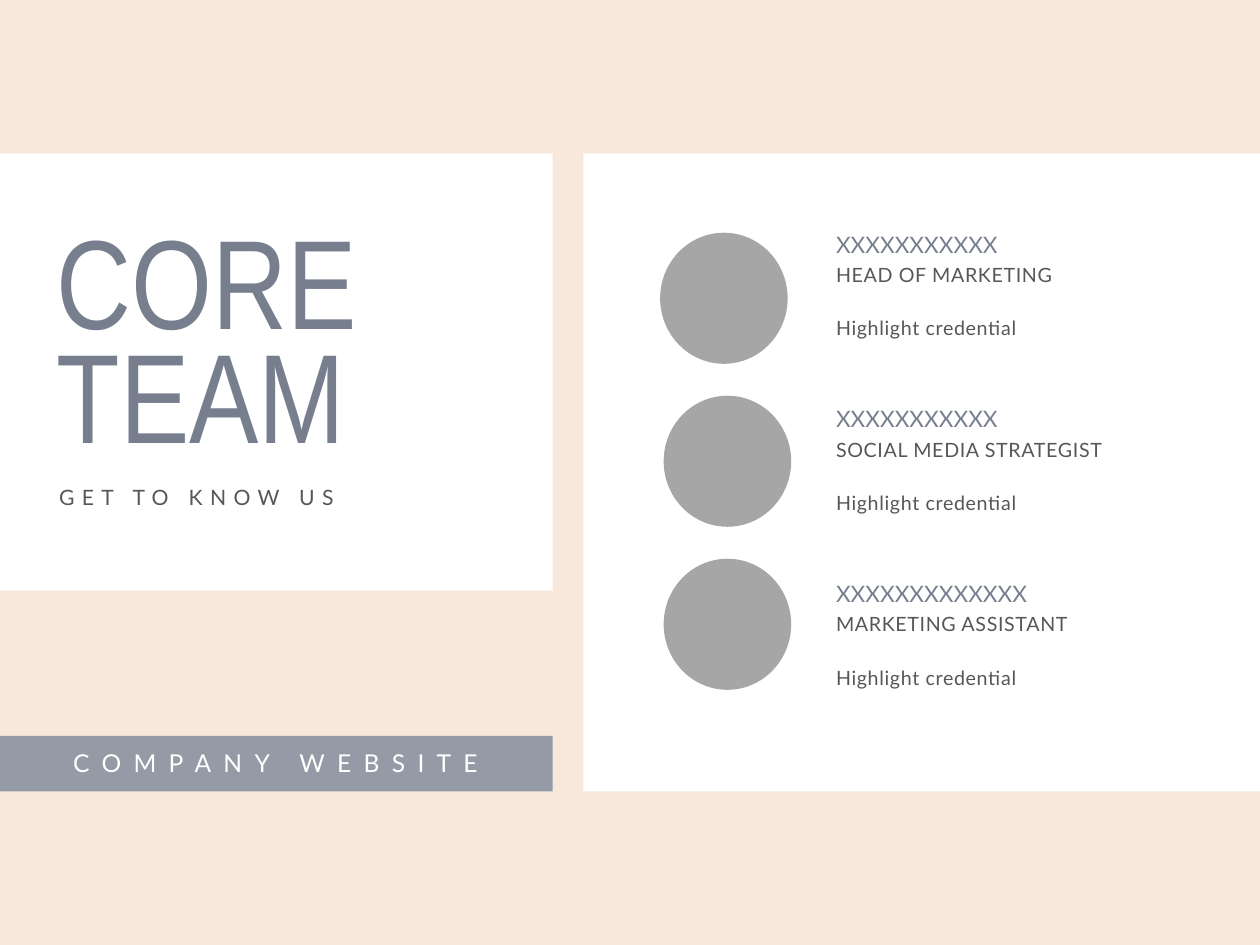
import pptx
import pptx.util
import pptx.dml.color
import pptx.enum.shapes
import pptx.enum.text

Color = pptx.dml.color.RGBColor
Kind = pptx.enum.shapes.MSO_SHAPE
Align = pptx.enum.text.PP_ALIGN
Inch = pptx.util.Inches
Pt = pptx.util.Pt

PEACH = Color(0xF7, 0xE8, 0xDB)
WHITE = Color(0xFF, 0xFF, 0xFF)
SLATE = Color(0x77, 0x7F, 0x8F)
STEEL = Color(0x94, 0x9A, 0xA6)
INK = Color(0x57, 0x57, 0x57)
GREY = Color(0xA6, 0xA6, 0xA6)

TITLE = ["CORE", "TEAM"]
TAGLINE = "GET TO KNOW US"
FOOTER = "COMPANY WEBSITE"
TEAM = [
    ("XXXXXXXXXXX", "HEAD OF MARKETING", "Highlight credential"),
    ("XXXXXXXXXXX", "SOCIAL MEDIA STRATEGIST", "Highlight credential"),
    ("XXXXXXXXXXXXX", "MARKETING ASSISTANT", "Highlight credential"),
]
LINES = [
    dict(drop=0, high=0.21, size=13.8, lead=15.2, color=SLATE),
    dict(drop=0.27, high=0.19, size=12, lead=13.2, color=INK, space=0.4),
    dict(drop=0.69, high=0.21, size=12, lead=15.6, color=INK, space=0.4),
]

WIDE, HIGH = 10.67, 8
TOP, BASE = 1.3, 6.7
LEFT_END, RIGHT_START = 4.68, 4.94
CARD_HIGH, BAR_HIGH = 3.7, 0.47
FIRST = 1.97
TEXT_STEP, DOT_STEP = 1.48, 1.38
TEXT_LEFT, TEXT_WIDE = 7.08, 3.02
DOT_LEFTS = [5.59, 5.62, 5.62]
DOT_WIDE, DOT_HIGH = 1.08, 1.11

deck = pptx.Presentation()
deck.slide_width, deck.slide_height = Inch(WIDE), Inch(HIGH)
slide = deck.slides.add_slide(deck.slide_layouts[6])
slide.background.fill.solid()
slide.background.fill.fore_color.rgb = PEACH


def add_shape(kind, left, top, wide, high, color):
    shape = slide.shapes.add_shape(kind, Inch(left), Inch(top), Inch(wide), Inch(high))
    shape.shadow.inherit = False
    shape.fill.solid()
    shape.fill.fore_color.rgb = color
    shape.line.fill.background()


def add_text(lines, left, top, wide, high, *, size, lead, color,
             font="Lato", space=0, align=Align.LEFT):
    box = slide.shapes.add_textbox(Inch(left), Inch(top), Inch(wide), Inch(high))
    frame = box.text_frame
    frame.word_wrap = True
    frame.margin_left = frame.margin_right = 0
    frame.margin_top = frame.margin_bottom = 0
    frame.text = "\n".join(lines)
    for para in frame.paragraphs:
        para.line_spacing = Pt(lead)
        para.alignment = align
        for run in para.runs:
            run.font.name = font
            run.font.size = Pt(size)
            run.font.color.rgb = color
            if space:
                run.font._element.set("spc", str(round(space * 100)))


add_shape(Kind.RECTANGLE, 0, TOP, LEFT_END, CARD_HIGH, WHITE)
add_text(TITLE, 0.48, 2.04, 3.69, 2.07, size=77.3, lead=69.6, color=SLATE,
         font="Arial Narrow")
add_text([TAGLINE], 0.5, 4.14, 3.69, 0.19, size=12.9, lead=12.9, color=INK, space=4.5)

add_shape(Kind.RECTANGLE, RIGHT_START, TOP, WIDE - RIGHT_START, BASE - TOP, WHITE)
for row, (member, dot_left) in enumerate(zip(TEAM, DOT_LEFTS)):
    for words, look in zip(member, LINES):
        style = dict(look)
        top = FIRST + row * TEXT_STEP + style.pop("drop")
        add_text([words], TEXT_LEFT, top, TEXT_WIDE, style.pop("high"), **style)
    add_shape(Kind.OVAL, dot_left, FIRST + row * DOT_STEP, DOT_WIDE, DOT_HIGH, GREY)

add_shape(Kind.RECTANGLE, 0, BASE - BAR_HIGH, LEFT_END, BAR_HIGH, STEEL)
add_text([FOOTER], 0.17, 6.37, 4.33, 0.22, size=15, lead=15, color=WHITE,
         space=7.5, align=Align.CENTER)

deck.save("out.pptx")
